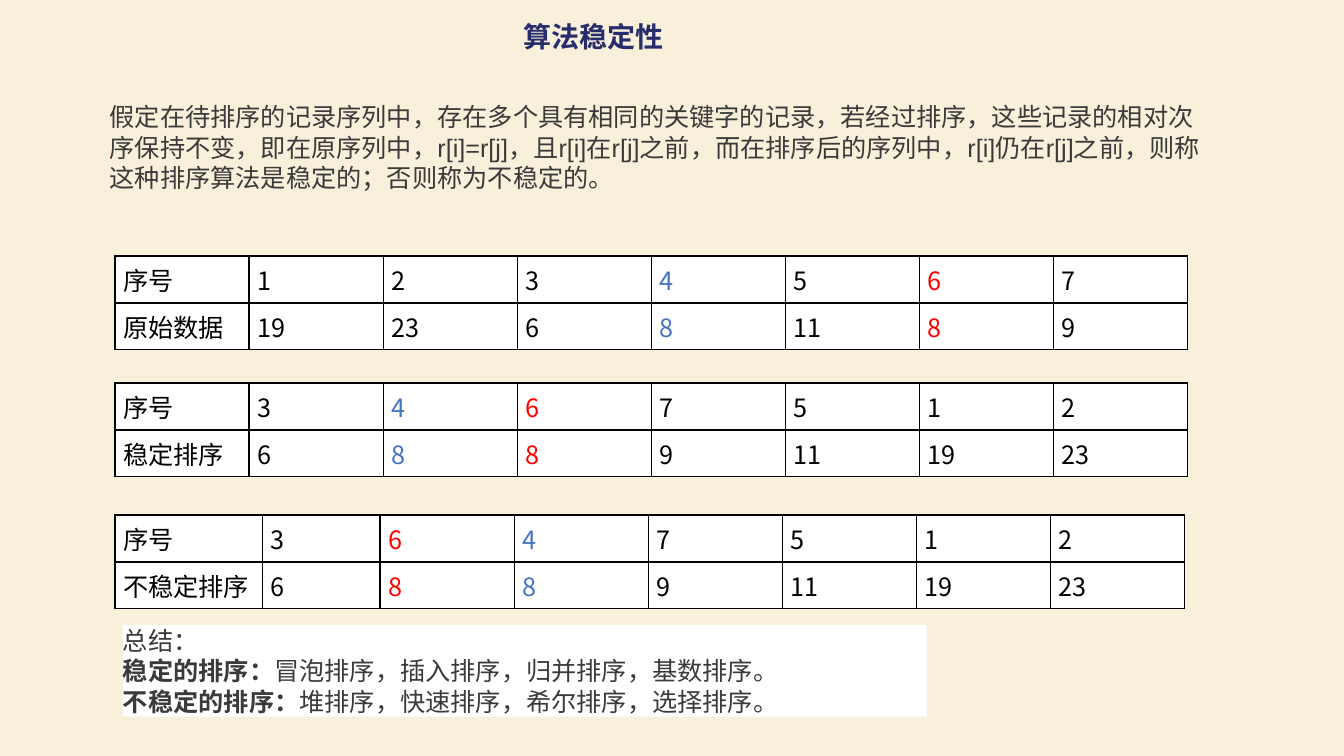
from lxml import etree
from pptx import Presentation
from pptx.dml.color import RGBColor
from pptx.enum.shapes import MSO_SHAPE as Shape
from pptx.enum.text import MSO_ANCHOR as Anchor, PP_ALIGN as Align
from pptx.oxml.ns import qn
from pptx.util import Inches, Pt

COLORS = {"page": "F9F0DB", "title": "272C6C", "body": "3A3A3A", "white": "FFFFFF",
          "black": "000000", "blue": "4472C4", "red": "FF0000"}
RECORDS = {1: 19, 2: 23, 3: 6, 4: 8, 5: 11, 6: 8, 7: 9}
EQUAL_KEYS = {4: "blue", 6: "red"}
EVEN_WIDTHS = [1.33] * 8
TABLES = [
    ("原始数据", [1, 2, 3, 4, 5, 6, 7], 2.54, EVEN_WIDTHS),
    ("稳定排序", [3, 4, 6, 7, 5, 1, 2], 3.8, EVEN_WIDTHS),
    ("不稳定排序", [3, 6, 4, 7, 5, 1, 2], 5.11, [1.46, 1.17] + [1.33] * 6),
]
DEFINITION = (
    "假定在待排序的记录序列中，存在多个具有相同的关键字的记录，若经过排序，"
    "这些记录的相对次序保持不变，即在原序列中，r[i]=r[j]，且r[i]在r[j]之前，"
    "而在排序后的序列中，r[i]仍在r[j]之前，则称这种排序算法是稳定的；否则称为不稳定的。"
)
SUMMARY = [
    ("稳定的排序：", "冒泡排序，插入排序，归并排序，基数排序。"),
    ("不稳定的排序：", "堆排序，快速排序，希尔排序，选择排序。"),
]


def paint(fill, color):
    """Give a fill one solid colour."""
    fill.solid()
    fill.fore_color.rgb = RGBColor.from_string(COLORS[color])


def add_span(para, text, font="Arial", size=18, color="body", bold=False):
    """Append formatted text to a left-aligned paragraph."""
    para.alignment = Align.LEFT
    span = para.add_run()
    span.text = text
    span.font.name = font
    span.font.size = Pt(size)
    span.font.bold = bold
    span.font.color.rgb = RGBColor.from_string(COLORS[color])


def add_text(page, box, text, wrap=True, **style):
    """Place one paragraph in a text box."""
    frame = page.shapes.add_textbox(*map(Inches, box)).text_frame
    frame.word_wrap = wrap
    add_span(frame.paragraphs[0], text, **style)


def add_borders(cell):
    """Draw a thin black line on each side of a cell."""
    properties = cell._tc.get_or_add_tcPr()
    for index, side in enumerate(("lnL", "lnR", "lnT", "lnB")):
        line = etree.Element(qn(f"a:{side}"), w=str(Pt(1)))
        solid = etree.SubElement(line, qn("a:solidFill"))
        etree.SubElement(solid, qn("a:srgbClr"), val=COLORS["black"])
        properties.insert(index, line)


def fill_cell(cell, text, color):
    """Write and format one table cell."""
    cell.vertical_anchor = Anchor.MIDDLE
    cell.margin_left = cell.margin_right = Inches(0.08)
    cell.margin_top = cell.margin_bottom = Inches(0.05)
    paint(cell.fill, "white")
    add_borders(cell)
    add_span(cell.text_frame.paragraphs[0], text, font="Noto Sans CJK SC", color=color)


def add_record_table(page, box, label, order, widths):
    """Build a table of record numbers above their keys."""
    table = page.shapes.add_table(2, len(widths), *map(Inches, box)).table
    table.first_row = table.horz_banding = False
    for column, width in zip(table.columns, widths):
        column.width = Inches(width)
    columns = [("序号", label)] + [(number, RECORDS[number]) for number in order]
    for column, pair in enumerate(columns):
        color = EQUAL_KEYS.get(pair[0], "black")
        for row, value in enumerate(pair):
            fill_cell(table.cell(row, column), str(value), color)


def add_summary(page, box):
    """Place the white panel that sums up both kinds of sorting."""
    panel = page.shapes.add_shape(Shape.RECTANGLE, *map(Inches, box))
    panel.shadow.inherit = False
    paint(panel.fill, "white")
    panel.line.fill.background()
    frame = panel.text_frame
    frame.word_wrap = True
    frame.vertical_anchor = Anchor.MIDDLE
    frame.margin_left = frame.margin_right = frame.margin_top = frame.margin_bottom = 0
    add_span(frame.paragraphs[0], "总结：")
    para = frame.add_paragraph()
    for index, (kind, examples) in enumerate(SUMMARY):
        if index:
            para.add_line_break()
        add_span(para, kind, bold=True)
        add_span(para, examples)


def main():
    """Build the slide on sorting stability."""
    deck = Presentation()
    deck.slide_width, deck.slide_height = Inches(13.33), Inches(7.5)
    page = deck.slides.add_slide(deck.slide_layouts[6])
    paint(page.background.fill, "page")
    add_text(page, (5.09, 0.14, 1.59, 0.44), "算法稳定性", wrap=False,
             font="Roboto", size=20, color="title", bold=True)
    for label, order, top, widths in TABLES:
        add_record_table(page, (1.14, top, sum(widths), 0.93), label, order, widths)
    add_summary(page, (1.22, 6.2, 7.97, 0.91))
    add_text(page, (0.99, 0.96, 11.04, 1.01), DEFINITION)
    deck.save("out.pptx")


if __name__ == "__main__":
    main()
